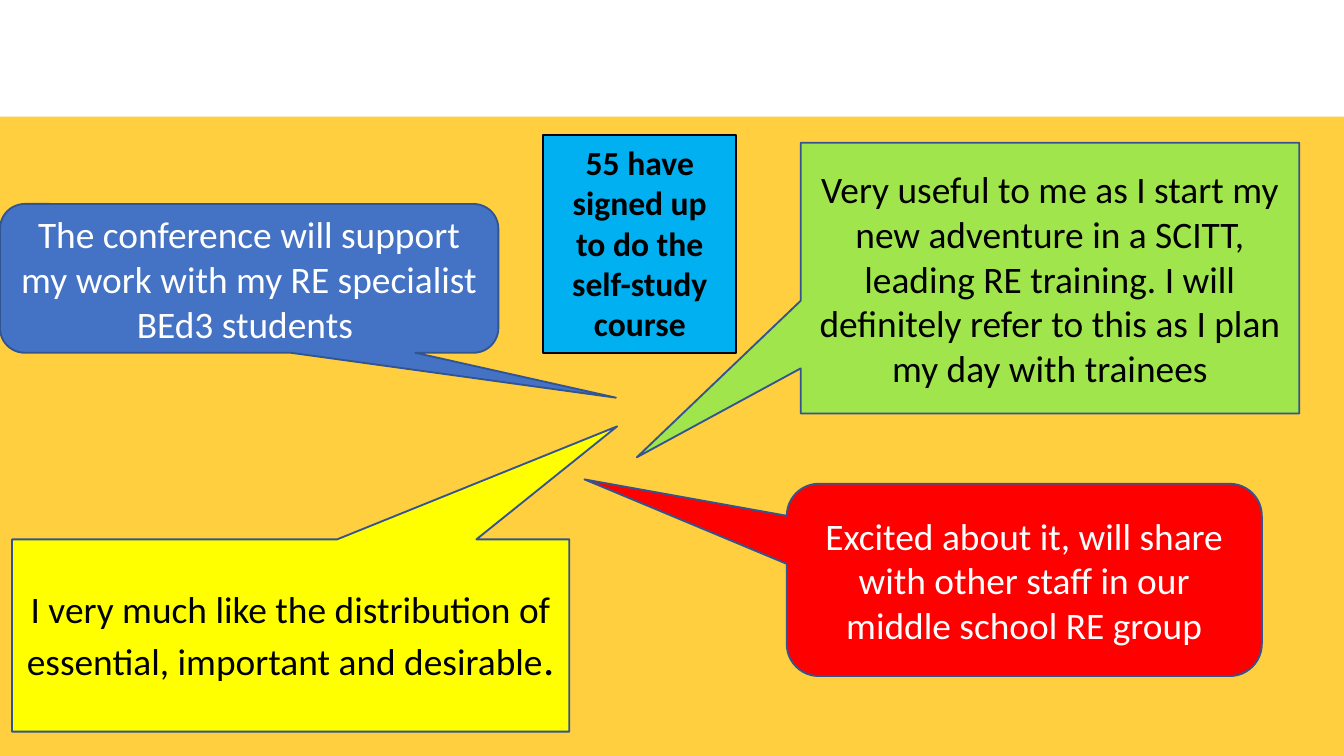
from pptx import Presentation
from pptx.dml.color import RGBColor
from pptx.enum import shapes as kinds, text as txt
from pptx.util import Pt

SHAPE = kinds.MSO_SHAPE
OUTLINE = "325491"


def paint(target, colour):
    """Give a fill a solid colour from a hex string."""
    target.solid()
    target.fore_color.rgb = RGBColor.from_string(colour)


def add_panel(slide, kind, box, fill, outline=None):
    """Add a flat filled shape in a box of points, outlined if asked."""
    panel = slide.shapes.add_shape(kind, *map(Pt, box))
    panel.shadow.inherit = False
    paint(panel.fill, fill)
    if outline:
        paint(panel.line.fill, outline)
        panel.line.width = Pt(1)
    else:
        panel.line.fill.background()
    return panel


def write(panel, pieces, colour, bold=False):
    """Write one centred paragraph from (wording, size) pieces."""
    frame = panel.text_frame
    frame.word_wrap = True
    paragraph = frame.paragraphs[0]
    paragraph.alignment = txt.PP_ALIGN.CENTER
    for wording, size in pieces:
        run = paragraph.add_run()
        run.text = wording
        run.font.name = "Calibri"
        run.font.size = Pt(size)
        run.font.bold = bold
        paint(run.font.fill, colour)


def add_quote(slide, kind, box, pointer, fill, colour, pieces):
    """Add a speech callout whose pointer is offset from the box centre."""
    quote = add_panel(slide, kind, box, fill, OUTLINE)
    for index, offset in enumerate(pointer):
        quote.adjustments[index] = offset
    quote.text_frame.vertical_anchor = txt.MSO_ANCHOR.MIDDLE
    write(quote, pieces, colour)


def add_signup(slide, box):
    """Add the box with the number of course sign-ups."""
    signup = add_panel(slide, SHAPE.RECTANGLE, box, "00B0F0", "000000")
    signup.text_frame.vertical_anchor = txt.MSO_ANCHOR.TOP
    write(signup, [("55 have signed up to do the self-study course", 18)], "000000", True)
    signup.text_frame.auto_size = txt.MSO_AUTO_SIZE.SHAPE_TO_FIT_TEXT


def build_feedback(slide):
    """Place the header band, the four quotes and the sign-up box."""
    paint(slide.background.fill, "FFCF40")
    add_panel(slide, SHAPE.RECTANGLE, (0, -1.5, 720, 64), "FFFFFF")
    rounded, square = SHAPE.ROUNDED_RECTANGULAR_CALLOUT, SHAPE.RECTANGULAR_CALLOUT
    quotes = [
        (rounded, (0, 109.3, 267, 79.7), (0.736, 0.802), "4472C4", "FFFFFF",
         [("The conference will support my work with my RE specialist BEd3 students ", 20)]),
        (square, (6.5, 289, 298.5, 103), (0.586, -1.088), "FFFF00", "000000",
         [("I very much like the distribution of essential, important and desirable", 20),
          (".", 24)]),
        (rounded, (421.5, 259.2, 254.5, 103), (-0.926, -0.523), "FF0000", "FFFFFF",
         [("Excited about it, will share with other staff in our middle school RE group", 20)]),
        (square, (429, 76.5, 267, 145), (-0.829, 0.662), "9FE54B", "000000",
         [("Very useful to me as I start my new adventure in a SCITT, leading RE training. "
           "I will definitely refer to this as I plan my day with trainees", 20)]),
    ]
    for quote in quotes:
        add_quote(slide, *quote)
    add_signup(slide, (291, 72.5, 103.5, 116.5))


def main():
    """Build and save the slide."""
    deck = Presentation()
    deck.slide_width, deck.slide_height = Pt(720), Pt(405)
    build_feedback(deck.slides.add_slide(deck.slide_layouts[6]))
    deck.save("out.pptx")


if __name__ == "__main__":
    main()
